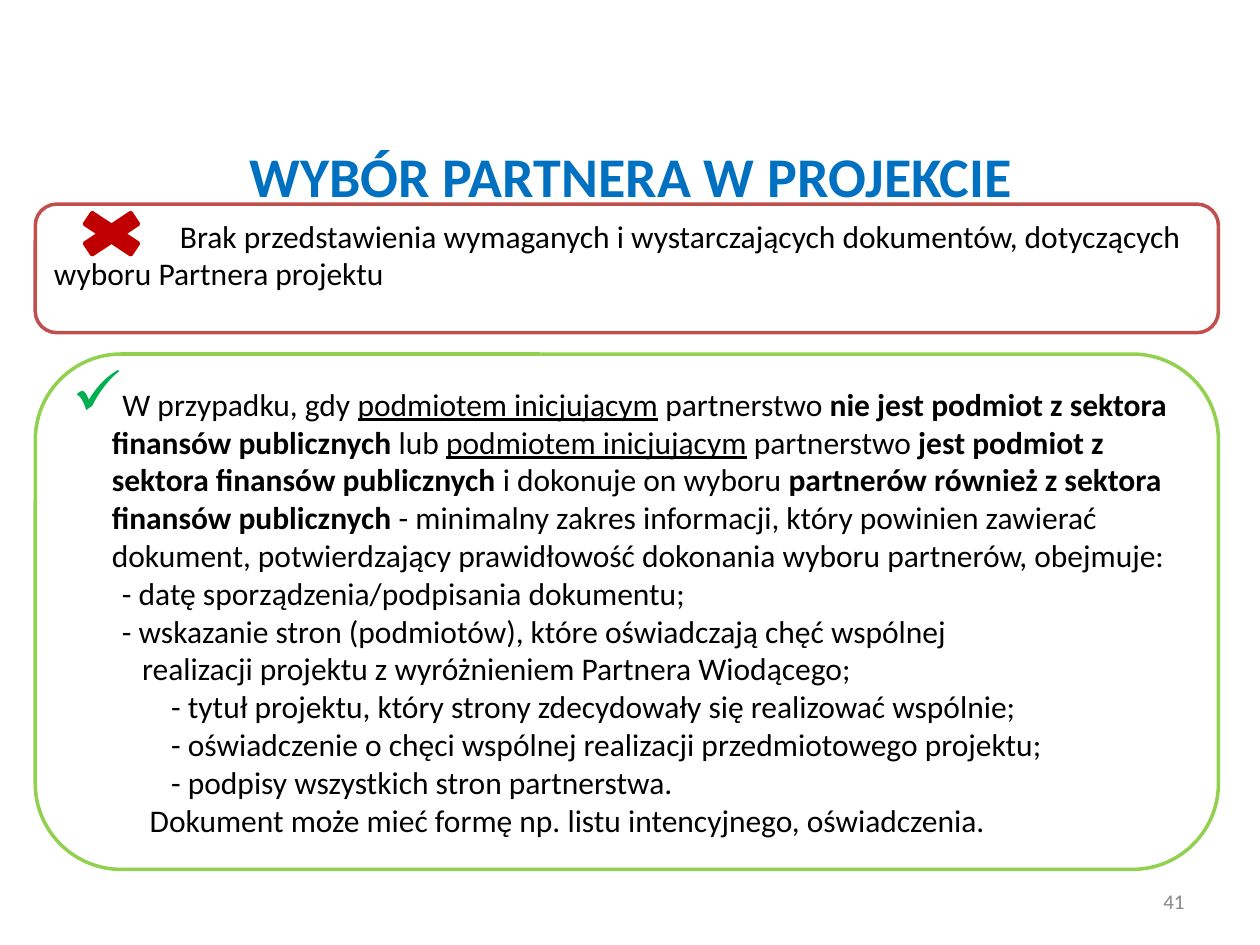
from lxml import etree
from pptx import Presentation
from pptx.dml.color import RGBColor
from pptx.enum.shapes import MSO_SHAPE
from pptx.enum.text import MSO_ANCHOR, PP_ALIGN
from pptx.oxml.ns import qn
from pptx.util import Inches, Pt

ROUNDED, CROSS = MSO_SHAPE.ROUNDED_RECTANGLE, MSO_SHAPE.MATH_MULTIPLY
TOP, MIDDLE = MSO_ANCHOR.TOP, MSO_ANCHOR.MIDDLE
LEFT, CENTER, RIGHT = PP_ALIGN.LEFT, PP_ALIGN.CENTER, PP_ALIGN.RIGHT

FONT = "Calibri"
BLUE, BLACK, GREY = "0070C0", "000000", "898989"
RED, DARK_RED, LIME, GREEN = "C0504D", "C00000", "92D050", "00B050"
PLAIN, BOLD, UNDERLINED = "plain", "bold", "underlined"

TITLE = "WYBÓR PARTNERA W PROJEKCIE"
PROBLEM = ("Brak przedstawienia wymaganych i wystarczających dokumentów, "
           "dotyczących wyboru Partnera projektu")
ADVICE = [
    ("W przypadku, gdy ", PLAIN),
    ("podmiotem inicjującym", UNDERLINED),
    (" partnerstwo ", PLAIN),
    ("nie jest podmiot z sektora finansów publicznych", BOLD),
    (" lub ", PLAIN),
    ("podmiotem inicjującym", UNDERLINED),
    (" partnerstwo ", PLAIN),
    ("jest podmiot z sektora finansów publicznych", BOLD),
    (" i dokonuje on wyboru ", PLAIN),
    ("partnerów również z sektora finansów publicznych ", BOLD),
    ("- minimalny zakres informacji, który powinien zawierać dokument, "
     "potwierdzający prawidłowość dokonania wyboru partnerów, obejmuje:", PLAIN),
]
REQUIREMENTS = [
    (0.39, "- datę sporządzenia/podpisania dokumentu;"),
    (0.39, "- wskazanie stron (podmiotów), które oświadczają chęć wspólnej"),
    (0.55, "realizacji projektu z wyróżnieniem Partnera Wiodącego;"),
    (0.78, "- tytuł projektu, który strony zdecydowały się realizować wspólnie;"),
    (0.78, "- oświadczenie o chęci wspólnej realizacji przedmiotowego projektu;"),
    (0.78, "- podpisy wszystkich stron partnerstwa."),
    (0.61, "Dokument może mieć formę np. listu intencyjnego, oświadczenia."),
]
PAGE = "41"
BOX_LEFT, BOX_WIDTH = 0.28, 9.39


def rgb(value):
    return RGBColor.from_string(value)


def add_run(paragraph, text, size=18, color=BLACK, style=PLAIN):
    run = paragraph.add_run()
    run.text = text
    run.font.name, run.font.size = FONT, Pt(size)
    run.font.color.rgb = rgb(color)
    run.font.bold = style == BOLD
    run.font.underline = style == UNDERLINED


def set_indent(paragraph, left, first=0):
    properties = paragraph._p.get_or_add_pPr()
    properties.set("marL", str(Inches(left)))
    properties.set("indent", str(Inches(first)))
    return properties


def add_check_bullet(paragraph):
    properties = set_indent(paragraph, 0.31, -0.31)
    color = etree.SubElement(properties, qn("a:buClr"))
    etree.SubElement(color, qn("a:srgbClr"), val=GREEN)
    etree.SubElement(properties, qn("a:buSzPct"), val="200000")
    etree.SubElement(properties, qn("a:buChar"), char="✓")


def add_figure(slide, kind, place, line, fill=None, anchor=MIDDLE):
    figure = slide.shapes.add_shape(kind, *map(Inches, place))
    figure.shadow.inherit = False
    if fill:
        figure.fill.solid()
        figure.fill.fore_color.rgb = rgb(fill)
    else:
        figure.fill.background()
    figure.line.color.rgb = rgb(line)
    figure.line.width = Pt(2)
    frame = figure.text_frame
    frame.word_wrap, frame.vertical_anchor = True, anchor
    frame.paragraphs[0].alignment = LEFT
    return frame


def main():
    deck = Presentation()
    deck.slide_width, deck.slide_height = Inches(10), Inches(7.5)
    slide = deck.slides.add_slide(deck.slide_layouts[5])

    title = slide.shapes.title
    title.left, title.top, title.width, title.height = map(Inches, (0.51, 1.15, 9, 0.48))
    title.text_frame.vertical_anchor = MIDDLE
    heading = title.text_frame.paragraphs[0]
    heading.alignment = CENTER
    add_run(heading, TITLE, 32, BLUE, BOLD)

    problem_box = add_figure(slide, ROUNDED, (BOX_LEFT, 1.62, BOX_WIDTH, 1.02), RED, anchor=TOP)
    problem = problem_box.paragraphs[0]
    set_indent(problem, 0, 1)
    add_run(problem, PROBLEM)
    add_figure(slide, CROSS, (0.53, 1.62, 0.71, 0.47), DARK_RED, DARK_RED)

    advice_box = add_figure(slide, ROUNDED, (BOX_LEFT, 2.81, BOX_WIDTH, 4.09), LIME)
    advice = advice_box.paragraphs[0]
    add_check_bullet(advice)
    for text, style in ADVICE:
        add_run(advice, text, style=style)
    for left, text in REQUIREMENTS:
        requirement = advice_box.add_paragraph()
        requirement.alignment = LEFT
        set_indent(requirement, left)
        add_run(requirement, text)

    page_frame = slide.shapes.add_textbox(*map(Inches, (7.17, 6.95, 2.33, 0.4))).text_frame
    page_frame.word_wrap, page_frame.vertical_anchor = True, MIDDLE
    page = page_frame.paragraphs[0]
    page.alignment = RIGHT
    add_run(page, PAGE, 12, GREY)

    deck.save("out.pptx")


if __name__ == "__main__":
    main()
